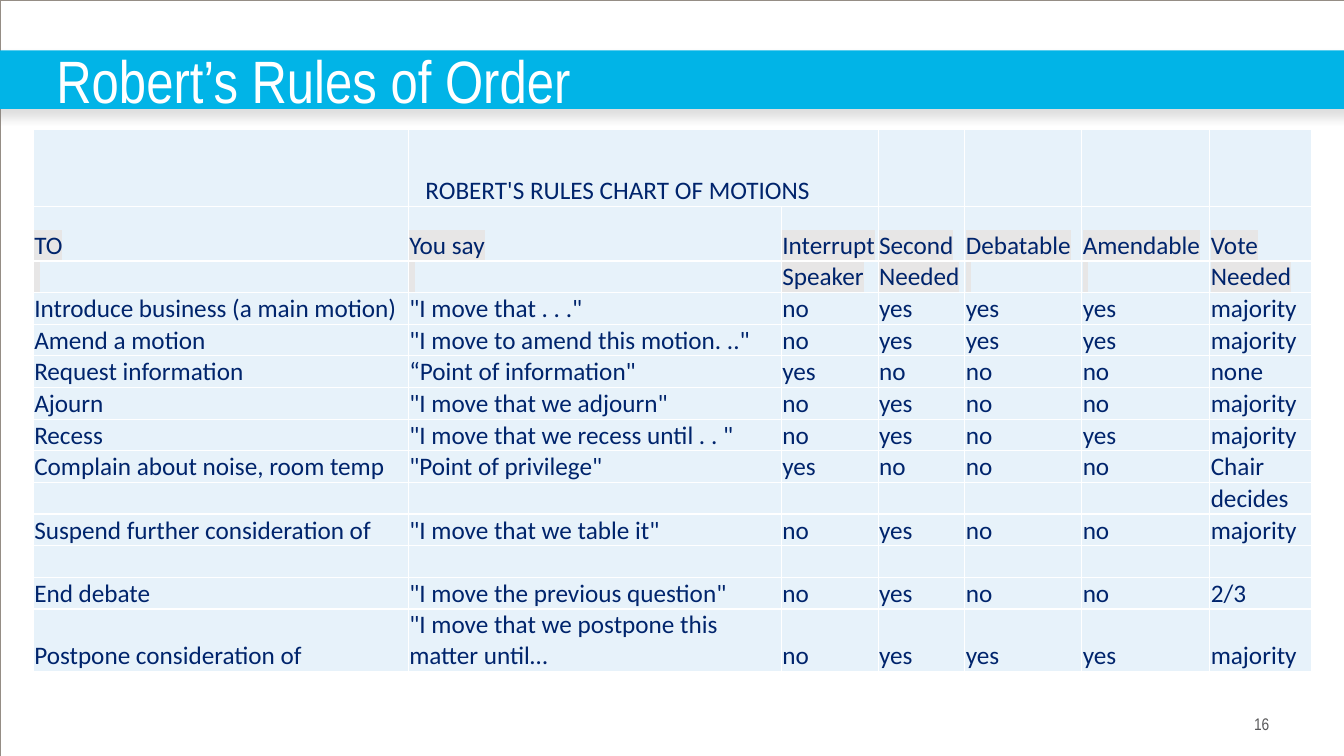
from lxml import etree
from pptx import Presentation, util as u
from pptx.dml.color import RGBColor
from pptx.enum import shapes, text
from pptx.oxml import ns

SLIDE_W, SLIDE_H = 13.33, 7.5
NAVY, PALE, WHITE, GREY = "00246C", "E7F2FA", "FFFFFF", "E7E6E6"
COLUMNS = [3.72, 3.7, 0.96, 0.86, 1.16, 1.27, 1.01]
ROW_H = 0.314
TALL_ROWS = {0: 0.77, 1: 0.54, 13: 0.62}
HEADER_ROWS = (1, 2)
MOTIONS = [
    ["", "ROBERT'S RULES CHART OF MOTIONS", "", "", "", "", ""],
    ["TO", "You say", "Interrupt", "Second", "Debatable", "Amendable", "Vote"],
    [" ", " ", "Speaker", "Needed", " ", " ", "Needed"],
    ["Introduce business (a main motion)", '"I move that . . ."', "no", "yes", "yes", "yes", "majority"],
    ["Amend a motion", '"I move to amend this motion. .."', "no", "yes", "yes", "yes", "majority"],
    ["Request information", '“Point of information"', "yes", "no", "no", "no", "none"],
    ["Ajourn", '"I move that we adjourn"', "no", "yes", "no", "no", "majority"],
    ["Recess", '"I move that we recess until . . "', "no", "yes", "no", "yes", "majority"],
    ["Complain about noise, room temp", '"Point of privilege"', "yes", "no", "no", "no", "Chair"],
    ["", "", "", "", "", "", "decides"],
    ["Suspend further consideration of", '"I move that we table it"', "no", "yes", "no", "no", "majority"],
    [""] * 7,
    ["End debate", '"I move the previous question"', "no", "yes", "no", "no", "2/3"],
    ["Postpone consideration of", '"I move that we postpone this matter until…', "no", "yes", "yes", "yes",
     "majority"],
]


def color(hex_code):
    return RGBColor.from_string(hex_code)


def add_xml(parent, tag, **attributes):
    return etree.SubElement(parent, ns.qn(tag), attributes)


def write(frame, words, size=18, font="Calibri", ink=NAVY, align=text.PP_ALIGN.LEFT, highlight=None):
    """Put one formatted run into a text frame."""
    paragraph = frame.paragraphs[0]
    paragraph.alignment = align
    run = paragraph.add_run()
    run.text = words
    run.font.size = u.Pt(size)
    run.font.color.rgb = color(ink)
    if highlight:
        mark = add_xml(run.font._element, "a:highlight")
        add_xml(mark, "a:srgbClr", val=highlight)
    run.font.name = font


def add_label(slide, box, words, **style):
    frame = slide.shapes.add_textbox(*map(u.Inches, box)).text_frame
    frame.word_wrap = True
    frame.vertical_anchor = text.MSO_ANCHOR.MIDDLE
    frame.margin_left = frame.margin_right = frame.margin_top = frame.margin_bottom = 0
    write(frame, words, **style)


def add_box(slide, box, fill=None, line=None, line_width=0.13):
    shape = slide.shapes.add_shape(shapes.MSO_SHAPE.RECTANGLE, *map(u.Inches, box))
    shape.shadow.inherit = False
    if fill:
        shape.fill.solid()
        shape.fill.fore_color.rgb = color(fill)
    else:
        shape.fill.background()
    if line:
        shape.line.color.rgb = color(line)
        shape.line.width = u.Pt(line_width)
    else:
        shape.line.fill.background()
    return shape


def add_title_band(slide, left, top, width, height):
    overhang = 0.11
    band = add_box(slide, (left - overhang, top, width + 2 * overhang, height), fill="01B4E7")
    effects = band._element.spPr.find(ns.qn("a:effectLst"))
    shadow = add_xml(effects, "a:outerShdw", blurRad=str(u.Pt(7)), dist=str(u.Pt(4.8)),
                     dir="5400000", rotWithShape="0")
    shade = add_xml(shadow, "a:srgbClr", val="808080")
    add_xml(shade, "a:alpha", val="25000")
    add_label(slide, (left + 0.56, top, width - 0.56, height), "Robert’s Rules of Order",
              size=42.7, font="Arial Narrow", ink=WHITE)


def style_cell(cell):
    cell.margin_left = cell.margin_right = cell.margin_top = u.Inches(0.01)
    cell.margin_bottom = 0
    cell.vertical_anchor = text.MSO_ANCHOR.BOTTOM
    properties = cell._tc.get_or_add_tcPr()
    for side in ("a:lnL", "a:lnR", "a:lnT", "a:lnB"):
        border = add_xml(properties, side, w=str(u.Pt(1)))
        add_xml(add_xml(border, "a:solidFill"), "a:srgbClr", val=WHITE)
    cell.fill.solid()
    cell.fill.fore_color.rgb = color(PALE)


def add_motions_table(slide, left, top):
    heights = [TALL_ROWS.get(row, ROW_H) for row in range(len(MOTIONS))]
    box = (left, top, sum(COLUMNS), sum(heights))
    table = slide.shapes.add_table(len(heights), len(COLUMNS), *map(u.Inches, box)).table
    table.first_row = table.horz_banding = False
    for column, width in zip(table.columns, COLUMNS):
        column.width = u.Inches(width)
    for r, (height, entries) in enumerate(zip(heights, MOTIONS)):
        table.rows[r].height = u.Inches(height)
        for c, words in enumerate(entries):
            cell = table.cell(r, c)
            style_cell(cell)
            if words:
                write(cell.text_frame, words, highlight=GREY if r in HEADER_ROWS else None)
    heading = table.cell(0, 1)
    heading.merge(table.cell(0, 2))
    heading.margin_left = u.Inches(0.17)


def main():
    deck = Presentation()
    deck.slide_width, deck.slide_height = u.Inches(SLIDE_W), u.Inches(SLIDE_H)
    slide = deck.slides.add_slide(deck.slide_layouts[6])
    add_label(slide, (10.33, 7.08, 2.26, 0.2), "16", size=12, font="Arial Narrow", ink="58585A",
              align=text.PP_ALIGN.RIGHT)
    add_box(slide, (0, 0, SLIDE_W, SLIDE_H), line="958D85")
    add_title_band(slide, 0, 0.5, SLIDE_W, 0.58)
    add_motions_table(slide, 0.33, 1.28)
    deck.save("out.pptx")


if __name__ == "__main__":
    main()
